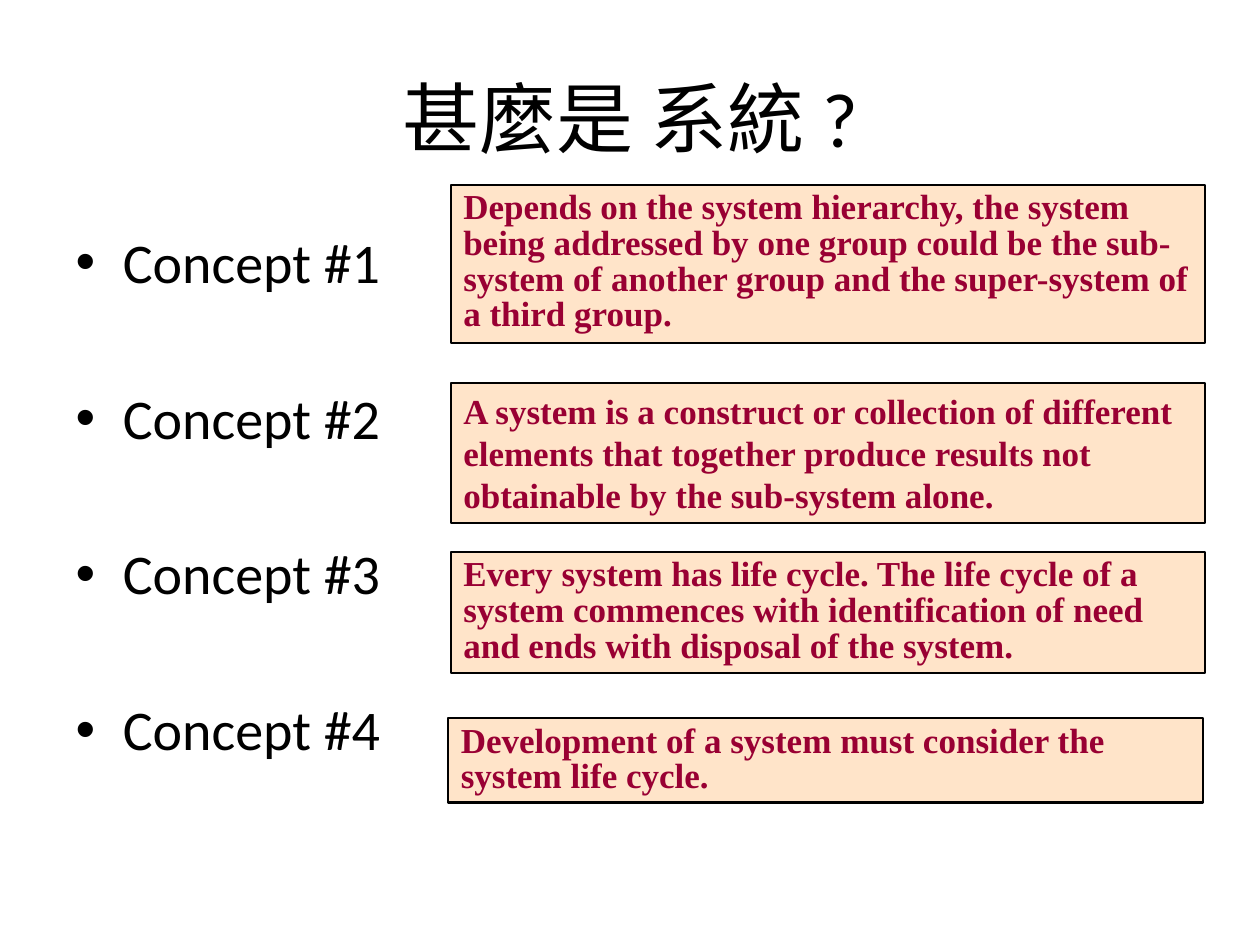
from dataclasses import dataclass

import pptx
import pptx.dml.color
import pptx.enum.shapes
import pptx.enum.text
import pptx.oxml
import pptx.oxml.ns
import pptx.util
from pptx.util import Cm, Pt


@dataclass(frozen=True)
class Theme:
    black: str = "000000"
    box_fill: str = "FFE4C9"
    box_text: str = "990033"
    sans: str = "Calibri"
    serif: str = "Times New Roman"
    east_asian: str = "Noto Sans CJK SC"
    title_size: float = 44
    list_size: float = 32
    box_size: float = 20
    box_line: float = 1.25


@dataclass(frozen=True)
class Explanation:
    text: str
    top: float
    height: float
    left: float = 9.09
    line_spacing: float = 20.4


THEME = Theme()
BOX_WIDTH = 15.21
CONCEPT_GAP = 50.7
EXPLANATIONS = [
    Explanation(
        "Depends on the system hierarchy, the system being addressed by one group "
        "could be the sub-system of another group and the super-system of a third group.",
        top=3.73, height=3.18),
    Explanation(
        "A system is a construct or collection of different elements that together "
        "produce results not obtainable by the sub-system alone.",
        top=7.72, height=2.82, line_spacing=24),
    Explanation(
        "Every system has life cycle. The life cycle of a system commences with "
        "identification of need and ends with disposal of the system.",
        top=11.13, height=2.44),
    Explanation(
        "Development of a system must consider the system life cycle.",
        top=14.48, height=1.7, left=9.04),
]


def rgb(colour: str) -> pptx.dml.color.RGBColor:
    return pptx.dml.color.RGBColor.from_string(colour)


def write_text(paragraph, text: str, *, font: str, size: float, colour: str = THEME.black,
               bold: bool = False, east_asian: str | None = None) -> None:
    run = paragraph.add_run()
    run.text = text
    run.font.name = font
    run.font.size = Pt(size)
    run.font.bold = bold
    run.font.color.rgb = rgb(colour)
    if east_asian:
        properties = run.font._element
        element = pptx.oxml.parse_xml(
            f'<a:ea {pptx.oxml.ns.nsdecls("a")} typeface="{east_asian}"/>')
        properties.find(pptx.oxml.ns.qn("a:latin")).addnext(element)


def place(shape, left: float, top: float, width: float, height: float) -> None:
    """Position a shape, with all lengths in centimetres."""
    shape.left, shape.top = Cm(left), Cm(top)
    shape.width, shape.height = Cm(width), Cm(height)


def fill_title(title) -> None:
    place(title, 1.27, 0.76, 22.86, 3.18)
    paragraph = title.text_frame.paragraphs[0]
    paragraph.alignment = pptx.enum.text.PP_ALIGN.CENTER
    write_text(paragraph, "甚麼是 系統", font=THEME.east_asian, size=THEME.title_size,
               east_asian=THEME.east_asian)
    write_text(paragraph, " ?", font=THEME.sans, size=THEME.title_size)


def fill_concepts(body, count: int) -> None:
    place(body, 1.27, 4.45, 22.86, 12.57)
    frame = body.text_frame
    frame.auto_size = pptx.enum.text.MSO_AUTO_SIZE.NONE
    for number in range(1, count + 1):
        paragraph = frame.paragraphs[0] if number == 1 else frame.add_paragraph()
        if number > 1:
            paragraph.space_before = Pt(CONCEPT_GAP)
        write_text(paragraph, f"Concept #{number}", font=THEME.sans, size=THEME.list_size)


def add_explanation(slide, explanation: Explanation) -> None:
    shape = slide.shapes.add_shape(
        pptx.enum.shapes.MSO_SHAPE.RECTANGLE, Cm(explanation.left), Cm(explanation.top),
        Cm(BOX_WIDTH), Cm(explanation.height))
    shape.shadow.inherit = False
    shape.fill.solid()
    shape.fill.fore_color.rgb = rgb(THEME.box_fill)
    shape.line.color.rgb = rgb(THEME.black)
    shape.line.width = Pt(THEME.box_line)
    frame = shape.text_frame
    frame.word_wrap = True
    frame.vertical_anchor = pptx.enum.text.MSO_ANCHOR.TOP
    paragraph = frame.paragraphs[0]
    paragraph.alignment = pptx.enum.text.PP_ALIGN.LEFT
    paragraph.line_spacing = Pt(explanation.line_spacing)
    write_text(paragraph, explanation.text, font=THEME.serif, size=THEME.box_size,
               colour=THEME.box_text, bold=True)


def main() -> None:
    presentation = pptx.Presentation()
    presentation.slide_width, presentation.slide_height = Cm(25.4), Cm(19.05)
    slide = presentation.slides.add_slide(presentation.slide_layouts[1])
    fill_title(slide.shapes.title)
    fill_concepts(slide.placeholders[1], len(EXPLANATIONS))
    for explanation in EXPLANATIONS:
        add_explanation(slide, explanation)
    presentation.save("out.pptx")


if __name__ == "__main__":
    main()
